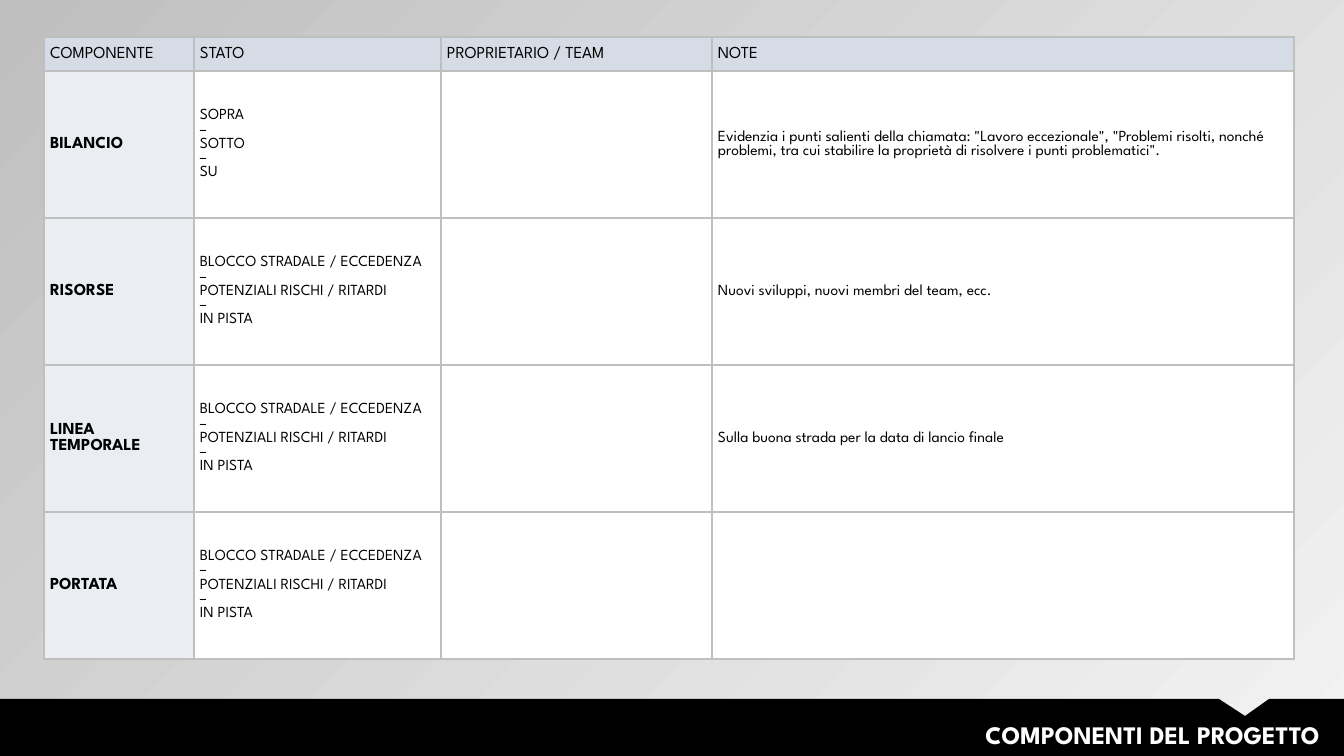
from pptx import Presentation
from pptx.dml.color import RGBColor
from pptx.enum.text import MSO_ANCHOR as Anchor, MSO_AUTO_SIZE as Fit, PP_ALIGN as Align
from pptx.oxml import parse_xml
from pptx.oxml.ns import nsdecls
from pptx.util import Pt

FONT = "League Spartan"
COLORS = {"text": "000000", "band": "000000", "title": "FFFFFF", "head": "D6DCE5",
          "label": "EAEEF3", "body": "FFFFFF", "line": "BFBFBF",
          "light": "F2F2F2", "dark": "BFBFBF"}
TITLE = "COMPONENTI DEL PROGETTO"
HEADS = ["COMPONENTE", "STATO", "PROPRIETARIO / TEAM", "NOTE"]
BUDGET = ["SOPRA", "SOTTO", "SU"]
TRACK = ["BLOCCO STRADALE / ECCEDENZA", "POTENZIALI RISCHI / RITARDI", "IN PISTA"]
ROWS = [
    ("BILANCIO", BUDGET,
     'Evidenzia i punti salienti della chiamata: "Lavoro eccezionale", "Problemi risolti, '
     'nonché problemi, tra cui stabilire la proprietà di risolvere i punti problematici".'),
    ("RISORSE", TRACK, "Nuovi sviluppi, nuovi membri del team, ecc."),
    ("LINEA TEMPORALE", TRACK, "Sulla buona strada per la data di lancio finale"),
    ("PORTATA", TRACK, ""),
]

# Lengths in px
WIDE, HIGH = 1344, 756
LEFT, TOP = 44, 37
COLS = [150, 247, 271, 582]
HEAD_H, ROW_H = 34, 147
INSET = 6
BAND_TOP = 699
BAND = [(0, BAND_TOP), (1219, BAND_TOP), (1245, 716), (1269, BAND_TOP),
        (WIDE, BAND_TOP), (WIDE, HIGH), (0, HIGH)]
TITLE_BOX = (417, 714, 913, 40)
SCALE = 914400 / 100.8


def px(n):
    return round(n * SCALE)


def rgb(name):
    return RGBColor.from_string(COLORS[name])


def style(frame, size, color, bold):
    for para in frame.paragraphs:
        for run in para.runs:
            font = run.font
            font.name, font.size, font.bold = FONT, Pt(size), bold
            font.color.rgb = rgb(color)


def border(cell):
    """Draw a thin line on all four sides of the cell."""
    props = cell._tc.get_or_add_tcPr()
    for i, side in enumerate(("lnL", "lnR", "lnT", "lnB")):
        props.insert(i, parse_xml(
            f'<a:{side} {nsdecls("a")} w="{Pt(1)}"><a:solidFill>'
            f'<a:srgbClr val="{COLORS["line"]}"/></a:solidFill></a:{side}>'))


def fill_cell(cell, text, size, bold, back):
    cell.text_frame.text = text
    style(cell.text_frame, size, "text", bold)
    cell.vertical_anchor = Anchor.MIDDLE
    cell.margin_left = cell.margin_right = px(INSET)
    cell.margin_top = cell.margin_bottom = 0
    cell.fill.solid()
    cell.fill.fore_color.rgb = rgb(back)
    border(cell)


def add_grid(slide):
    high = HEAD_H + ROW_H * len(ROWS)
    grid = slide.shapes.add_table(len(ROWS) + 1, len(COLS), px(LEFT), px(TOP),
                                  px(sum(COLS)), px(high)).table
    for col, width in zip(grid.columns, COLS):
        col.width = px(width)
    for i, row in enumerate(grid.rows):
        row.height = px(ROW_H if i else HEAD_H)
    for c, head in enumerate(HEADS):
        fill_cell(grid.cell(0, c), head, 12, False, "head")
    for r, (label, states, note) in enumerate(ROWS, 1):
        fill_cell(grid.cell(r, 0), label, 12, True, "label")
        for c, text in enumerate(("\n–\n".join(states), "", note), 1):
            fill_cell(grid.cell(r, c), text, 11, False, "body")


def add_band(slide):
    pen = slide.shapes.build_freeform(*BAND[0], scale=SCALE)
    pen.add_line_segments(BAND[1:], close=True)
    band = pen.convert_to_shape()
    band.shadow.inherit = False
    band.fill.solid()
    band.fill.fore_color.rgb = rgb("band")
    band.line.fill.background()


def set_title(slide):
    title = slide.shapes.title
    title.left, title.top, title.width, title.height = map(px, TITLE_BOX)
    frame = title.text_frame
    frame.text = TITLE
    frame.word_wrap = True
    frame.auto_size = Fit.NONE
    frame.vertical_anchor = Anchor.TOP
    frame.paragraphs[0].alignment = Align.RIGHT
    style(frame, 18, "title", True)
    # Bring the title in front of the band
    slide.shapes._spTree.append(title._element)


def main():
    deck = Presentation()
    deck.slide_width, deck.slide_height = px(WIDE), px(HIGH)
    slide = deck.slides.add_slide(deck.slide_layouts[5])
    back = slide.background.fill
    back.gradient()
    back.gradient_angle = 135
    for stop, name in zip(back.gradient_stops, ("light", "dark")):
        stop.color.rgb = rgb(name)
    add_grid(slide)
    add_band(slide)
    set_title(slide)
    deck.save("out.pptx")


if __name__ == "__main__":
    main()
